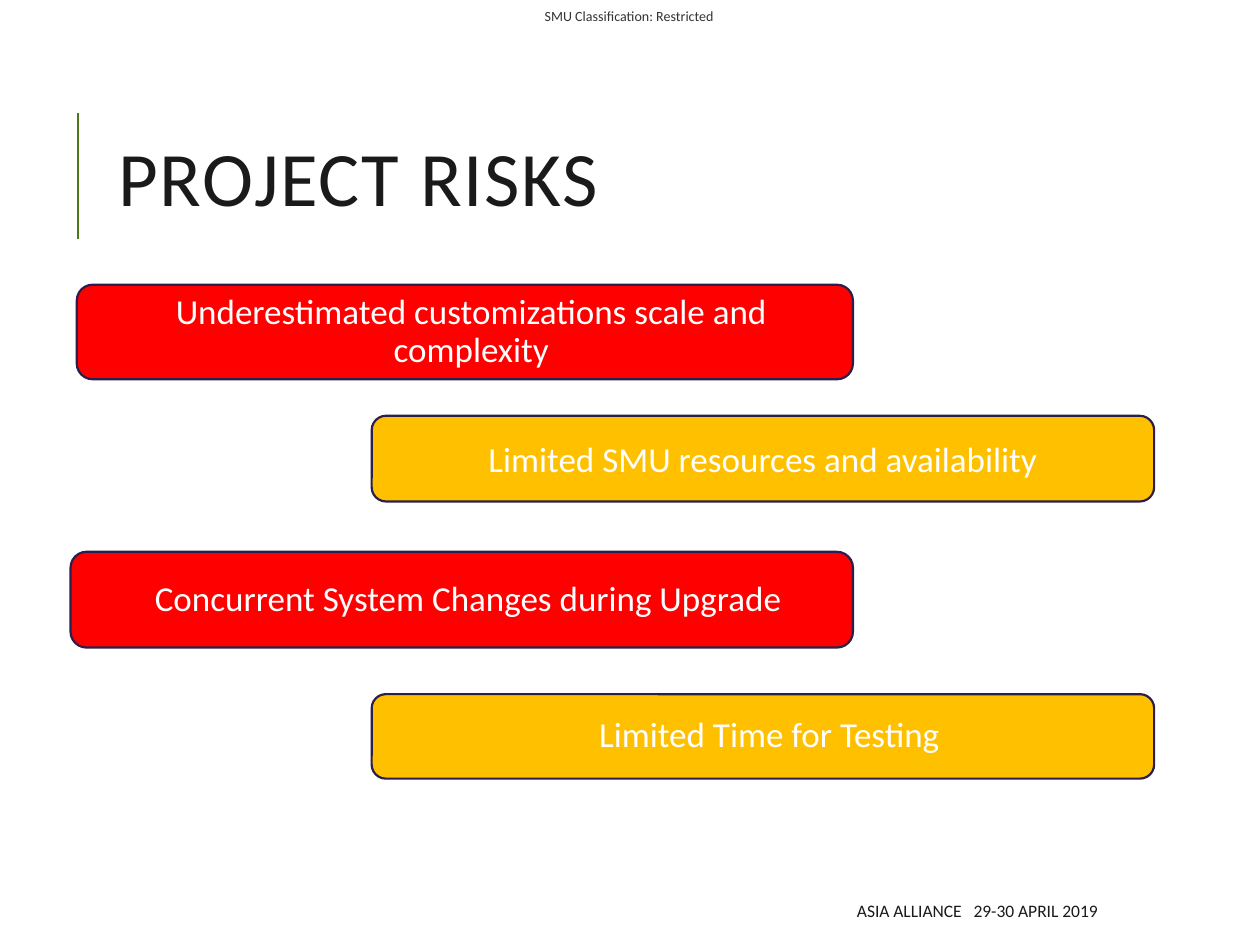
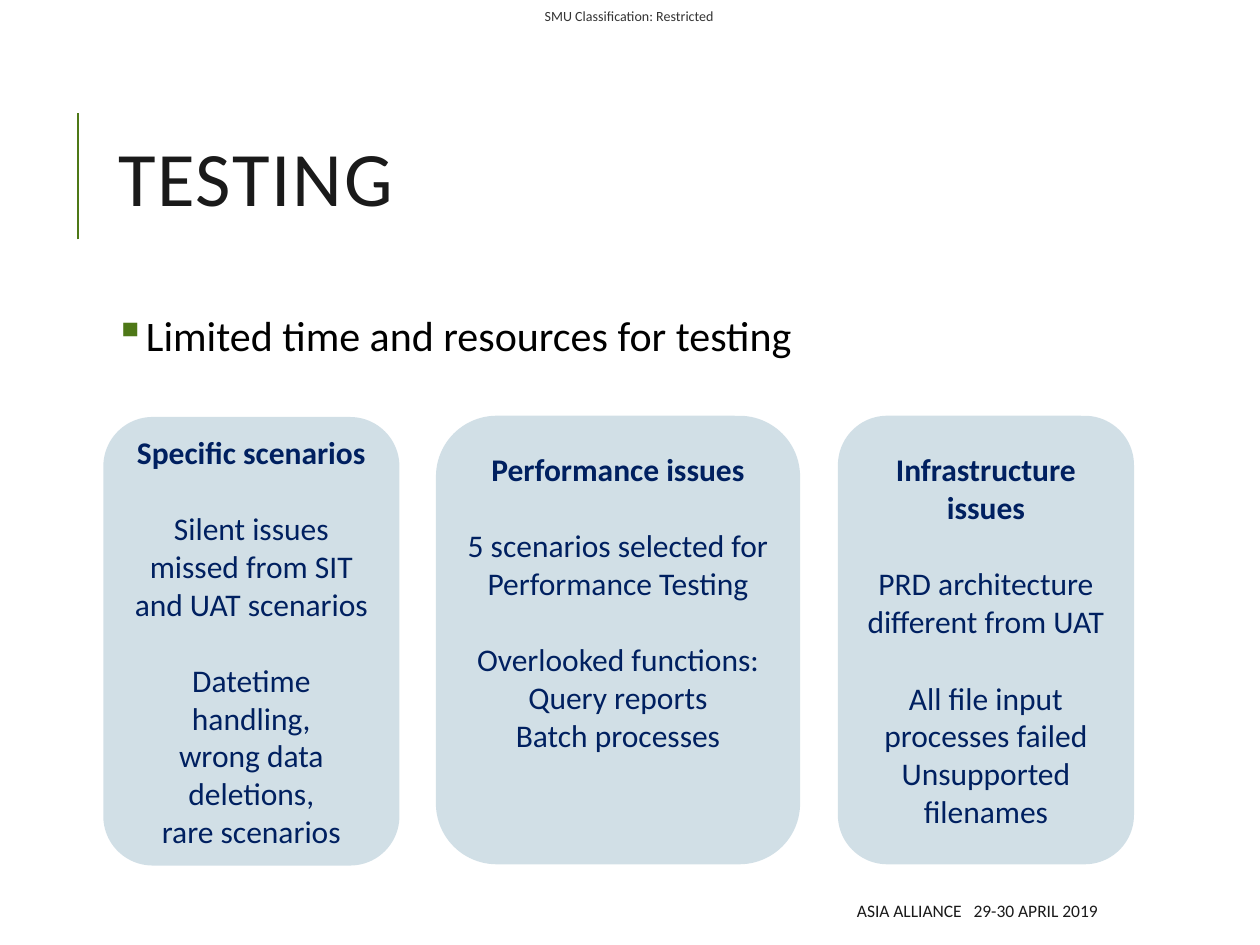
from lxml.etree import SubElement
from pptx import Presentation
from pptx.dml.color import RGBColor
from pptx.enum.shapes import MSO_CONNECTOR, MSO_SHAPE
from pptx.enum.text import MSO_ANCHOR as Anchor, PP_ALIGN as Align
from pptx.oxml.ns import qn
from pptx.util import Inches, Pt

FONT = "Calibri"
WHITE = RGBColor(0xFF, 0xFF, 0xFF)
BLACK = RGBColor(0x00, 0x00, 0x00)
INK = RGBColor(0x1A, 0x1A, 0x1A)
GREY = RGBColor(0x33, 0x33, 0x33)
GREEN = RGBColor(0x4E, 0x78, 0x17)
RED = RGBColor(0xFF, 0x00, 0x00)
AMBER = RGBColor(0xFF, 0xC0, 0x00)
PURPLE = RGBColor(0x2C, 0x1E, 0x4C)
NAVY = RGBColor(0x00, 0x20, 0x60)
PALE_BLUE = RGBColor(0xA5, 0xC1, 0xCF)

CARD_TEXT_SIZE = 18
CARD_LINE = Pt(22)  # one line of card text

# text, box, fill, left shift of the text, line spacing
RISKS = [
    ("Underestimated customizations scale and complexity",
     (0.61, 2.26, 6.16, 0.75), RED, 0.1, 0.9),
    ("Limited SMU resources and availability",
     (2.95, 3.3, 6.21, 0.68), AMBER, 0, 1.0),
    ("Concurrent System Changes during Upgrade",
     (0.56, 4.38, 6.21, 0.76), RED, 0.1, 0.9),
    ("Limited Time for Testing",
     (2.95, 5.51, 6.21, 0.67), AMBER, 0.1, 0.9),
]

# heading, groups of lines, box, free lines at the bottom
CARDS = [
    ("Specific scenarios",
     [["Silent issues missed from SIT and UAT scenarios"],
      ["Datetime handling,", "wrong data deletions,", "rare scenarios"]],
     (0.82, 3.31, 2.35, 3.56), 0),
    ("Performance issues",
     [["5 scenarios selected for Performance Testing"],
      ["Overlooked functions:", "Query reports", "Batch processes"]],
     (3.46, 3.3, 2.89, 3.56), 2),
    ("Infrastructure issues",
     [["PRD architecture different from UAT"],
      ["All file input processes failed", "Unsupported filenames"]],
     (6.65, 3.3, 2.35, 3.56), 0),
]


def set_values(target, values):
    for name, value in values.items():
        setattr(target, name, value)


def add_run(paragraph, text, size, color, bold=False, tracking=0):
    """Add a run; tracking is the letter spacing in points."""
    run = paragraph.add_run()
    run.text = text
    set_values(run.font, {"name": FONT, "size": Pt(size), "bold": bold})
    run.font.color.rgb = color
    if tracking:
        run.font._element.set("spc", str(int(tracking * 100)))


def add_text_box(slide, box, anchor=Anchor.MIDDLE, margin=None, **paragraph_format):
    """Add an empty text box and return its first paragraph."""
    frame = slide.shapes.add_textbox(*map(Inches, box)).text_frame
    set_values(frame, {"word_wrap": True, "vertical_anchor": anchor})
    if margin is not None:
        sides = ("left", "top", "right", "bottom")
        set_values(frame, {f"margin_{side}": Inches(margin) for side in sides})
    paragraph = frame.paragraphs[0]
    set_values(paragraph, paragraph_format)
    return paragraph


def add_rounded_box(slide, box, fill):
    shape = slide.shapes.add_shape(MSO_SHAPE.ROUNDED_RECTANGLE, *map(Inches, box))
    shape.shadow.inherit = False
    shape.fill.solid()
    shape.fill.fore_color.rgb = fill
    set_values(shape.text_frame, {"word_wrap": True, "vertical_anchor": Anchor.MIDDLE})
    return shape


def set_bullet(paragraph, character, color, indent):
    properties = paragraph._p.get_or_add_pPr()
    properties.set("marL", str(Inches(indent)))
    properties.set("indent", str(-Inches(indent)))
    bullet_color = SubElement(properties, qn("a:buClr"))
    SubElement(bullet_color, qn("a:srgbClr"), val=str(color))
    SubElement(properties, qn("a:buChar"), char=character)


def add_slide(presentation, title):
    """Add a slide with the title, accent line, classification and footer."""
    slide = presentation.slides.add_slide(presentation.slide_layouts[6])
    accent = slide.shapes.add_connector(
        MSO_CONNECTOR.STRAIGHT, Inches(0.62), Inches(1.9), Inches(0.62), Inches(0.9))
    accent.line.color.rgb = GREEN
    accent.line.width = Pt(1.5)
    SubElement(accent._element.spPr, qn("a:effectLst"))

    classification = add_text_box(
        slide, (4.18, 0, 1.63, 0.25), margin=0, alignment=Align.CENTER)
    add_run(classification, "SMU Classification: Restricted", 8, GREY)

    heading = add_text_box(slide, (0.84, 0.64, 7.97, 1.64), line_spacing=0.8)
    add_run(heading, title, 44, INK, tracking=1)

    footer = add_text_box(slide, (3.97, 7.08, 4.84, 0.3), alignment=Align.RIGHT)
    add_run(footer, "ASIA ALLIANCE", 10, INK)
    add_run(footer, " ", 10, INK, tracking=4.5)
    add_run(footer, "29-30 APRIL 2019", 10, INK)
    return slide


def add_risk(slide, text, box, fill, shift, line_spacing):
    shape = add_rounded_box(slide, box, fill)
    shape.line.color.rgb = PURPLE
    shape.line.width = Pt(1.25)
    shape.text_frame.margin_left = Inches(0.1 + shift)
    paragraph = shape.text_frame.paragraphs[0]
    set_values(paragraph, {"alignment": Align.CENTER, "line_spacing": line_spacing})
    add_run(paragraph, text, 20, WHITE)


def add_card(slide, heading, groups, box, free_lines):
    shape = add_rounded_box(slide, box, PALE_BLUE)
    shape.line.fill.background()
    color = shape.fill._xPr.find(qn("a:solidFill"))[0]
    SubElement(color, qn("a:alpha"), val="50000")

    frame = shape.text_frame
    frame.margin_bottom = Inches(0.05) + free_lines * CARD_LINE
    paragraph = frame.paragraphs[0]
    paragraph.alignment = Align.CENTER
    add_run(paragraph, heading, CARD_TEXT_SIZE, NAVY, bold=True)
    for group in groups:
        for index, line in enumerate(group):
            paragraph = frame.add_paragraph()
            paragraph.alignment = Align.CENTER
            if index == 0:
                paragraph.space_before = CARD_LINE
            add_run(paragraph, line, CARD_TEXT_SIZE, NAVY)


def main():
    presentation = Presentation()
    set_values(presentation, {"slide_width": Inches(10), "slide_height": Inches(7.5)})

    risks_slide = add_slide(presentation, "PROJECT RISKS")
    for risk in RISKS:
        add_risk(risks_slide, *risk)

    testing_slide = add_slide(presentation, "TESTING")
    for card in CARDS:
        add_card(testing_slide, *card)
    statement = add_text_box(testing_slide, (0.86, 2.45, 7.97, 4.4),
                             anchor=Anchor.TOP, margin=0.05, line_spacing=0.9)
    set_bullet(statement, "▪", GREEN, 0.19)
    add_run(statement, "Limited time and resources for testing", 24, BLACK)

    presentation.save("out.pptx")


if __name__ == "__main__":
    main()
